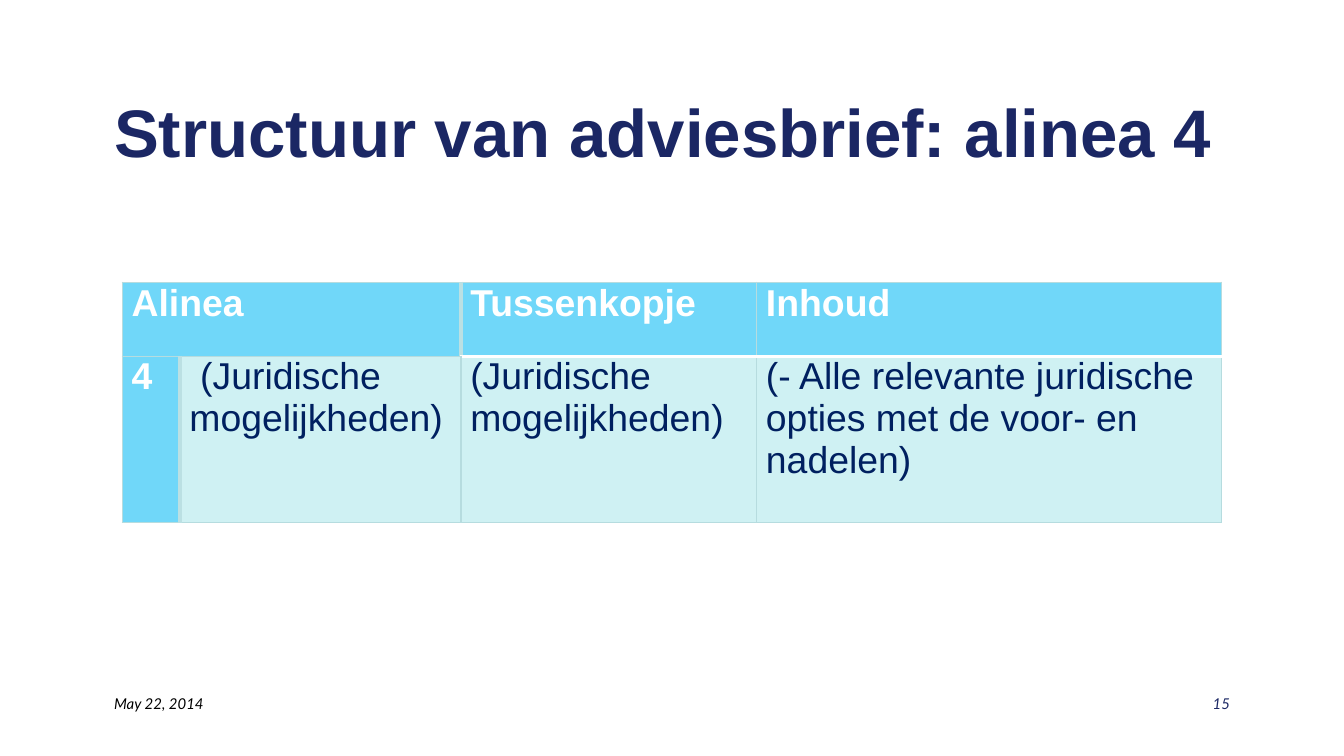
from dataclasses import dataclass

from lxml.etree import SubElement
from pptx import Presentation
from pptx.dml.color import RGBColor
from pptx.enum.text import MSO_ANCHOR, PP_ALIGN
from pptx.oxml.ns import qn
from pptx.util import Inches, Pt

NAVY, WHITE, EDGE = "1B2764", "FFFFFF", "B6DCDF"
HEAD, BODY, INK = "70D7F9", "CFF1F3", "002060"
WIDE = 10
TALL = WIDE * 9 / 16
COLS = (0.43, 2.09, 2.2, 3.46)
ROWS = (0.55, 1.24)


@dataclass
class Cell:
    row: int
    col: int
    text: str
    head: bool = False
    dent: float = 0
    right: tuple = (EDGE, 0.75)
    top: tuple = (EDGE, 0.75)
    base: tuple = (EDGE, 0.75)
    left: tuple = (EDGE, 0.75)


@dataclass
class Note:
    left: float
    text: str
    color: str
    align: PP_ALIGN


THICK = (WHITE, 2)
BAR = ("BBE0E3", 2)
CELLS = (
    Cell(0, 0, "Alinea", head=True),
    Cell(0, 2, "Tussenkopje", head=True, base=THICK, left=BAR),
    Cell(0, 3, "Inhoud", head=True, base=THICK),
    Cell(1, 0, "4", head=True, right=BAR),
    Cell(1, 1, "(Juridische mogelijkheden)", dent=0.08, left=BAR),
    Cell(1, 2, "(Juridische mogelijkheden)", top=THICK),
    Cell(1, 3, "(- Alle relevante juridische opties met de voor- en nadelen)",
         top=THICK),
)
NOTES = (
    Note(0.75, "May 22, 2014", "000000", PP_ALIGN.LEFT),
    Note(7.17, "15", NAVY, PP_ALIGN.RIGHT),
)


def paint(code: str) -> RGBColor:
    return RGBColor.from_string(code)


def write(frame, text: str, *, size: float, color: str, face: str = "Arial",
          bold: bool = False, slant: bool = False,
          align: PP_ALIGN = PP_ALIGN.LEFT) -> None:
    frame.word_wrap = True
    para = frame.paragraphs[0]
    para.alignment = align
    run = para.add_run()
    run.text = text
    font = run.font
    font.name, font.size = face, Pt(size)
    font.bold, font.italic = bold, slant
    font.color.rgb = paint(color)


def edge(cell, side: str, line: tuple) -> None:
    color, width = line
    rule = SubElement(cell._tc.get_or_add_tcPr(), qn(f"a:ln{side}"),
                      w=str(Pt(width)))
    fill = SubElement(rule, qn("a:solidFill"))
    SubElement(fill, qn("a:srgbClr"), val=color)


def draw_cell(table, data: Cell) -> None:
    cell = table.cell(data.row, data.col)
    cell.margin_left = cell.margin_right = Inches(0.07)
    cell.margin_top = cell.margin_bottom = 0
    lines = zip("LRTB", (data.left, data.right, data.top, data.base))
    for side, line in lines:
        edge(cell, side, line)
    cell.fill.solid()
    cell.fill.fore_color.rgb = paint(HEAD if data.head else BODY)
    write(cell.text_frame, data.text, size=20, bold=data.head,
          color=WHITE if data.head else INK)
    if data.dent:
        props = cell.text_frame.paragraphs[0]._p.get_or_add_pPr()
        props.set("marL", "0")
        props.set("indent", str(Inches(data.dent)))


def draw_table(slide) -> None:
    table = slide.shapes.add_table(
        len(ROWS), len(COLS), Inches(0.91), Inches(2.1),
        Inches(sum(COLS)), Inches(sum(ROWS))).table
    for col, width in zip(table.columns, COLS):
        col.width = Inches(width)
    for row, height in zip(table.rows, ROWS):
        row.height = Inches(height)
    table.cell(0, 0).merge(table.cell(0, 1))
    for data in CELLS:
        draw_cell(table, data)


def draw_note(slide, note: Note) -> None:
    box = slide.shapes.add_textbox(Inches(note.left), Inches(5.12),
                                   Inches(2.08), Inches(0.38))
    write(box.text_frame, note.text, size=8, color=note.color, face="Lato",
          slant=True, align=note.align)


def main() -> None:
    deck = Presentation()
    deck.slide_width, deck.slide_height = Inches(WIDE), Inches(TALL)
    slide = deck.slides.add_slide(deck.slide_layouts[5])
    title = slide.shapes.title
    title.left, title.top = Inches(0.75), Inches(0.5)
    title.width, title.height = Inches(8.5), Inches(0.94)
    title.text_frame.vertical_anchor = MSO_ANCHOR.MIDDLE
    write(title.text_frame, "Structuur van adviesbrief: alinea 4",
          size=36, color=NAVY, bold=True)
    draw_table(slide)
    for note in NOTES:
        draw_note(slide, note)
    deck.save("out.pptx")


if __name__ == "__main__":
    main()
